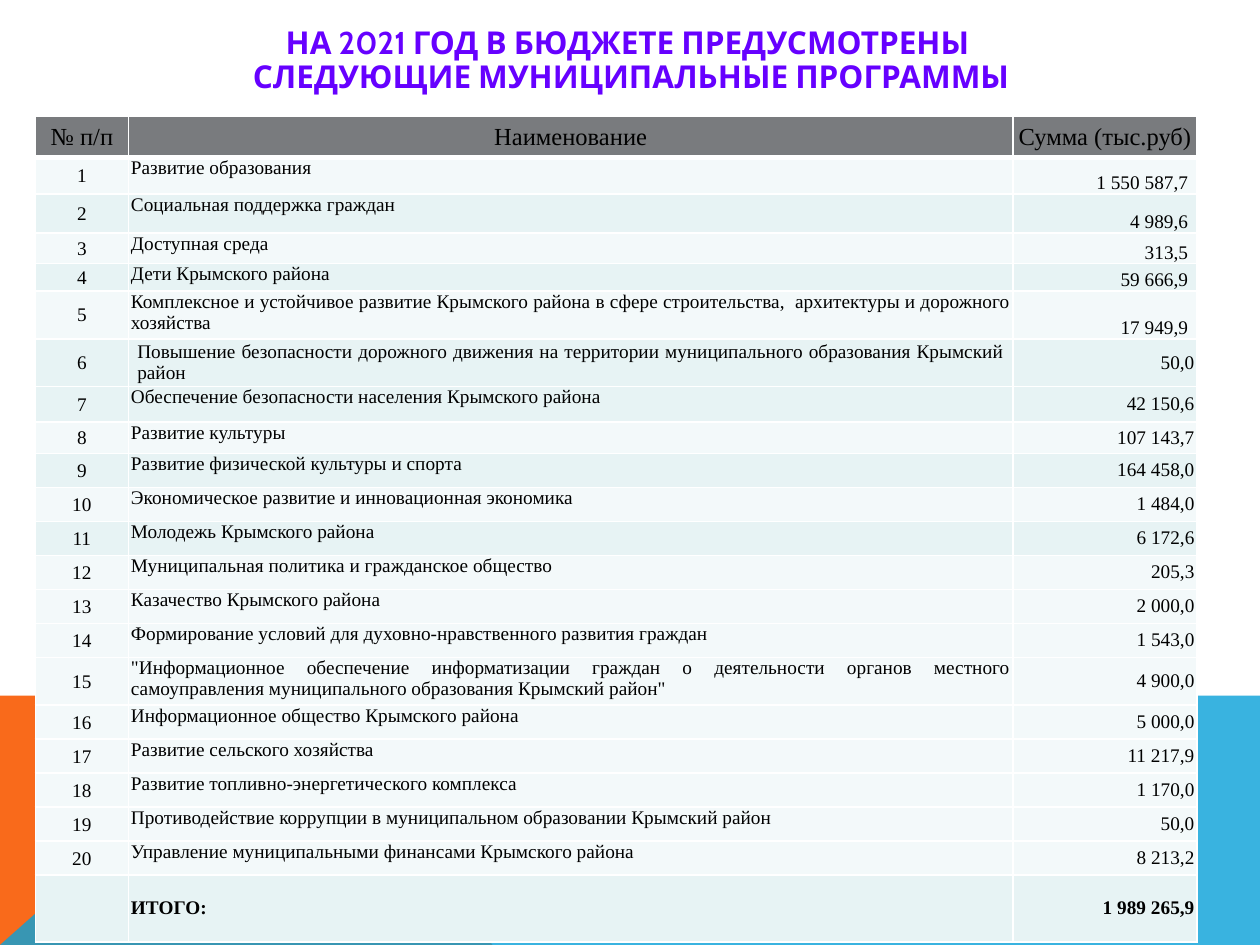
from lxml import etree
from pptx import Presentation
from pptx.dml.color import RGBColor
from pptx.enum import text
from pptx.oxml import ns
from pptx.util import Inches, Pt

COLORS = {
    "orange": "F96A1B", "blue": "08A1D9", "title": "6600FF", "header": "797B7E",
    "light": "F3F9FA", "tinted": "E7F3F4", "text": "000000", "border": "FFFFFF",
}
PROGRAMS = [
    ("Развитие образования", "1 550 587,7"),
    ("Социальная поддержка граждан", "4 989,6"),
    ("Доступная среда", "313,5"),
    ("Дети Крымского района", "59 666,9"),
    ("Комплексное и устойчивое развитие Крымского района в сфере строительства,  "
     "архитектуры и дорожного хозяйства", "17 949,9"),
    ("Повышение безопасности дорожного движения на территории муниципального "
     "образования Крымский район", "50,0"),
    ("Обеспечение безопасности населения Крымского района", "42 150,6"),
    ("Развитие культуры", "107 143,7"),
    ("Развитие физической культуры и спорта", "164 458,0"),
    ("Экономическое развитие и инновационная экономика", "1 484,0"),
    ("Молодежь Крымского района", "6 172,6"),
    ("Муниципальная политика и гражданское общество", "205,3"),
    ("Казачество Крымского района", "2 000,0"),
    ("Формирование условий для духовно-нравственного развития граждан", "1 543,0"),
    ("\"Информационное обеспечение информатизации граждан о деятельности органов "
     "местного самоуправления муниципального образования Крымский район\"", "4 900,0"),
    ("Информационное общество Крымского района", "5 000,0"),
    ("Развитие сельского хозяйства", "11 217,9"),
    ("Развитие топливно-энергетического комплекса", "1 170,0"),
    ("Противодействие коррупции в муниципальном образовании Крымский район", "50,0"),
    ("Управление муниципальными финансами Крымского района", "8 213,2"),
]
COLUMN_WIDTHS = [0.74, 7.02, 1.46]
ROW_HEIGHTS = {0: 0.33, 1: 0.29, 2: 0.31, 3: 0.24, 4: 0.22, 5: 0.38, 6: 0.38,
               7: 0.28, 8: 0.25, 15: 0.38, 21: 0.53}
TINTED_ROWS = {2, 4, 6, 7, 9, 11, 21}
LEFT_ROWS = {9, 10}
WIDE_MARGINS = {(row, 2) for row in range(1, 6)} | {(6, 1)}

presentation = Presentation()
presentation.slide_width = Inches(10)
presentation.slide_height = Inches(7.5)
slide = presentation.slides.add_slide(presentation.slide_layouts[6])


def add_band(points, color):
    corners = [(Inches(x), Inches(y)) for x, y in points]
    outline = slide.shapes.build_freeform(*corners[0])
    outline.add_line_segments(corners[1:], close=True)
    band = outline.convert_to_shape()
    band.shadow.inherit = False
    band.fill.solid()
    band.fill.fore_color.rgb = RGBColor.from_string(COLORS[color])
    band.line.fill.background()
    return band


def set_borders(cell, row):
    properties = cell._tc.get_or_add_tcPr()
    widths = {"lnL": 1, "lnR": 1, "lnT": 3 if row == 1 else 1, "lnB": 3 if row == 0 else 1}
    for position, (side, width) in enumerate(widths.items()):
        line = etree.Element(ns.qn(f"a:{side}"), w=str(Pt(width)))
        fill = etree.SubElement(line, ns.qn("a:solidFill"))
        etree.SubElement(fill, ns.qn("a:srgbClr"), val=COLORS["border"])
        properties.insert(position, line)


add_band([(0, 7.5), (0, 5.52), (2.23, 5.52), (3.91, 7.5)], "orange")
blue_band = add_band([(0, 7.5), (2.23, 5.52), (10, 5.52), (10, 7.5)], "blue")
blue = blue_band._element.spPr.find(f"{ns.qn('a:solidFill')}/{ns.qn('a:srgbClr')}")
etree.SubElement(blue, ns.qn("a:alpha"), val="80000")

title = slide.shapes.add_textbox(Inches(0.51), Inches(0.13), Inches(9), Inches(0.71)).text_frame
title.word_wrap = True
title.vertical_anchor = text.MSO_ANCHOR.MIDDLE
title.text = "НА 2021 ГОД В БЮДЖЕТЕ ПРЕДУСМОТРЕНЫ \vСЛЕДУЮЩИЕ МУНИЦИПАЛЬНЫЕ ПРОГРАММЫ"
heading = title.paragraphs[0]
heading.alignment = text.PP_ALIGN.CENTER
heading.line_spacing = 0.9
heading.font.name = "Cabin"
heading.font.size = Pt(18)
heading.font.bold = True
heading.font.color.rgb = RGBColor.from_string(COLORS["title"])

rows = [("№ п/п", "Наименование", "Сумма (тыс.руб)")]
rows += [(str(number), *program) for number, program in enumerate(PROGRAMS, 1)]
rows.append(("", "ИТОГО:", "1 989 265,9"))
total = len(rows) - 1

budget = slide.shapes.add_table(len(rows), 3, Inches(0.28), Inches(0.92),
                                Inches(9.23), Inches(6.54)).table
for column, width in zip(budget.columns, COLUMN_WIDTHS):
    column.width = Inches(width)

for r, values in enumerate(rows):
    budget.rows[r].height = Inches(ROW_HEIGHTS.get(r, 0.27))
    row_color = "header" if r == 0 else "tinted" if r in TINTED_ROWS else "light"
    for c, value in enumerate(values):
        cell = budget.cell(r, c)
        cell.text = value
        cell.fill.solid()
        cell.fill.fore_color.rgb = RGBColor.from_string(COLORS[row_color])
        set_borders(cell, r)

        centered = r == 0 or c == 0
        side = 0.01 if centered else 0.07 if (r, c) in WIDE_MARGINS else 0.02
        cell.margin_left = cell.margin_right = Inches(side)
        cell.margin_top = Inches(0.01 if centered else 0)
        cell.margin_bottom = 0

        cell.vertical_anchor = text.MSO_ANCHOR.MIDDLE
        if c == 1 and r not in (0, 6, total):
            cell.vertical_anchor = text.MSO_ANCHOR.TOP
        elif c == 2 and 1 <= r <= 5:
            cell.vertical_anchor = text.MSO_ANCHOR.BOTTOM

        paragraph = cell.text_frame.paragraphs[0]
        if centered:
            paragraph.alignment = text.PP_ALIGN.CENTER
        elif c == 2:
            paragraph.alignment = text.PP_ALIGN.RIGHT
        else:
            paragraph.alignment = text.PP_ALIGN.LEFT if r in LEFT_ROWS else text.PP_ALIGN.JUSTIFY
        paragraph.font.name = "Times New Roman"
        paragraph.font.size = Pt(14 if r == 0 else 11)
        paragraph.font.bold = r == total
        paragraph.font.color.rgb = RGBColor.from_string(COLORS["text"])

presentation.save("out.pptx")
